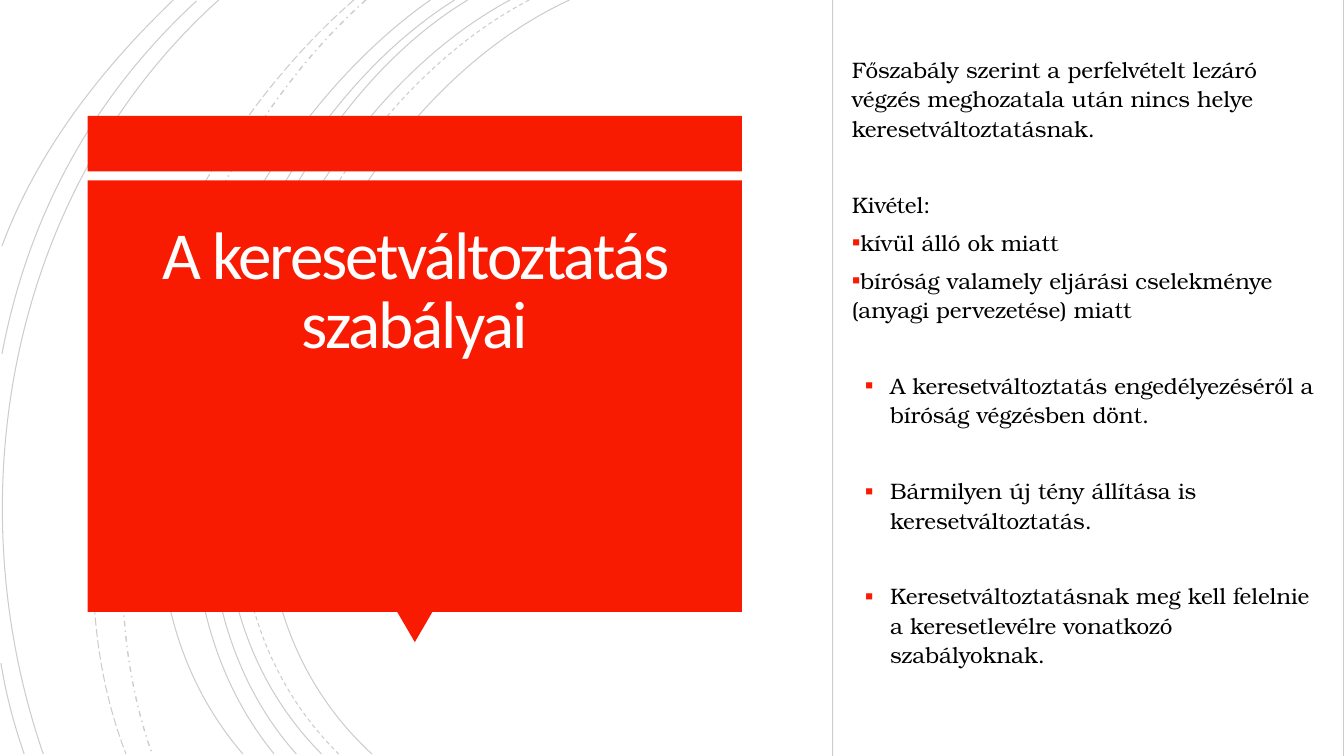
from pptx import Presentation
from pptx import util as u
from pptx.dml.color import RGBColor
from pptx.enum import dml, shapes, text
from pptx.oxml.ns import qn
from lxml import etree

PX = 9144  # 100 px to the inch
theme = dict(red="F81B02", white="FFFFFF", pale="FFFEFF", ink="000000",
             fade=20, head=48, body=16, sans="Calibri",
             serif="TeX Gyre Bonum", mark="Arial")


def rgb(name):
    return RGBColor.from_string(theme[name])


def write(par, words, size, font, color, line, after, align=None,
          track=0, margin=0, indent=0, bullet=False):
    run = par.add_run()
    run.text = words
    run.font.size, run.font.name = u.Pt(theme[size]), theme[font]
    run.font.color.rgb = rgb(color)
    run._r.get_or_add_rPr().set("spc", str(track))
    par.alignment, par.line_spacing = align, line
    par.space_before, par.space_after = u.Pt(0), u.Pt(after)
    ppr = par._p.get_or_add_pPr()
    ppr.set("marL", str(margin * PX))
    ppr.set("indent", str(indent * PX))
    if bullet:
        tint = etree.SubElement(ppr, qn("a:buClr"))
        etree.SubElement(tint, qn("a:srgbClr"), val=theme["red"])
        etree.SubElement(ppr, qn("a:buSzPct"), val="110000")
        etree.SubElement(ppr, qn("a:buFont"), typeface=theme["mark"])
        etree.SubElement(ppr, qn("a:buChar"), char="▪")
    else:
        etree.SubElement(ppr, qn("a:buNone"))


deck = Presentation()
deck.slide_width, deck.slide_height = u.Emu(12192000), 750 * PX
slide = deck.slides.add_slide(deck.slide_layouts[1])
tree = slide.shapes
thin = []  # shapes with a faint outline

# Background arcs: start, two control points, end, dash, width
dash = dml.MSO_LINE
arcs = [
    ((565, 0), (315, 115), (143, 540), (369, 748), dash.SOLID, 0.75),
    ((525, 0), (285, 125), (123, 537), (336, 748), dash.DASH, 0.75),
    ((506, 0), (270, 127), (110, 537), (319, 748), dash.SOLID, 0.75),
    ((464, 0), (244, 133), (110, 541), (294, 748), dash.SOLID, 0.75),
    ((451, 0), (231, 138), (97, 533), (272, 748), dash.SOLID, 0.75),
    ((427, 0), (217, 147), (53, 529), (241, 748), dash.SOLID, 0.75),
    ((363, 0), (176, 166), (65, 509), (151, 748), dash.DASH_DOT, 1),
    ((351, 0), (157, 169), (29, 499), (125, 748), dash.LONG_DASH, 0.75),
    ((217, 0), (11, 185), (-46, 490), (43, 748), dash.SOLID, 0.75),
    ((195, 1), (92, 96), (28, 214), (2, 351), dash.SOLID, 0.75),
    ((1, 658), (6, 689), (14, 719), (24, 748), dash.SOLID, 0.75),
    ((172, 0), (100, 69), (37, 150), (2, 244), dash.SOLID, 0.75),
]
for start, *dots, style, width in arcs:
    path = tree.build_freeform(*start, scale=PX)
    path.add_line_segments(dots, close=False)
    arc = path.convert_to_shape()
    # Turn the three segments into one cubic curve
    legs = list(arc._element.iter(qn("a:lnTo")))
    curve = etree.SubElement(legs[0].getparent(), qn("a:cubicBezTo"))
    for leg in legs:
        curve.append(leg[0])
        leg.getparent().remove(leg)
    arc.fill.background()
    arc.shadow.inherit = False
    arc.line.width, arc.line.dash_style = u.Pt(width), style
    thin.append(arc)

# Red title card with its pointer, and the text panel
kind = shapes.MSO_SHAPE
for form, box, fill, edge, turn in [
    (kind.RECTANGLE, (87, 115, 649, 55), "red", False, 0),
    (kind.ISOSCELES_TRIANGLE, (394, 607, 35, 30), "red", False, 180),
    (kind.RECTANGLE, (87, 179, 649, 428), "red", False, 0),
    (kind.RECTANGLE, (826, -1, 507, 752), "white", True, 0),
]:
    part = tree.add_shape(form, *[n * PX for n in box])
    part.rotation = turn
    part.shadow.inherit = False
    part.fill.solid()
    part.fill.fore_color.rgb = rgb(fill)
    if edge:
        part.line.width = u.Pt(0.75)
        thin.append(part)
    else:
        part.line.fill.background()

# Faint outlines
for part in thin:
    part.line.color.rgb = rgb("ink")
    ink = part.line._ln.find(".//" + qn("a:srgbClr"))
    etree.SubElement(ink, qn("a:alpha"), val=str(theme["fade"] * 1000))

# Place both placeholders above the shapes
title, body = tree.title, slide.placeholders[1]
for hold, box, pad in [(title, (96, 198, 631, 188), (25, 25)),
                       (body, (835, 48, 484, 640), (10, 5))]:
    tree._spTree.append(hold._element)
    hold.left, hold.top, hold.width, hold.height = [n * PX for n in box]
    frame = hold.text_frame
    frame.word_wrap, frame.auto_size = True, text.MSO_AUTO_SIZE.NONE
    frame.vertical_anchor = text.MSO_ANCHOR.TOP
    frame.margin_left = frame.margin_right = pad[0] * PX
    frame.margin_top = frame.margin_bottom = pad[1] * PX

# Title
write(title.text_frame.paragraphs[0], "A keresetváltoztatás szabályai",
      "head", "sans", "pale", 0.85, 6, align=text.PP_ALIGN.CENTER, track=-150)

# Rules: words, space after, format
near, far = 6, 33
plain = {}
flush = dict(indent=-25, bullet=True)
item = dict(margin=38, indent=-25, bullet=True)
rules = [
    ("Főszabály szerint a perfelvételt lezáró végzés meghozatala után "
     "nincs helye keresetváltoztatásnak.", far, plain),
    ("Kivétel:", near, plain),
    ("kívül álló ok miatt", near, flush),
    ("bíróság valamely eljárási cselekménye (anyagi pervezetése) miatt", far, flush),
    ("A keresetváltoztatás engedélyezéséről a bíróság végzésben dönt.", far, item),
    ("Bármilyen új tény állítása is keresetváltoztatás.", far, item),
    ("Keresetváltoztatásnak meg kell felelnie a keresetlevélre vonatkozó "
     "szabályoknak.", near, item),
]
frame = body.text_frame
for i, (words, after, look) in enumerate(rules):
    par = frame.add_paragraph() if i else frame.paragraphs[0]
    write(par, words, "body", "serif", "ink", 1.1, after, **look)

deck.save("out.pptx")
